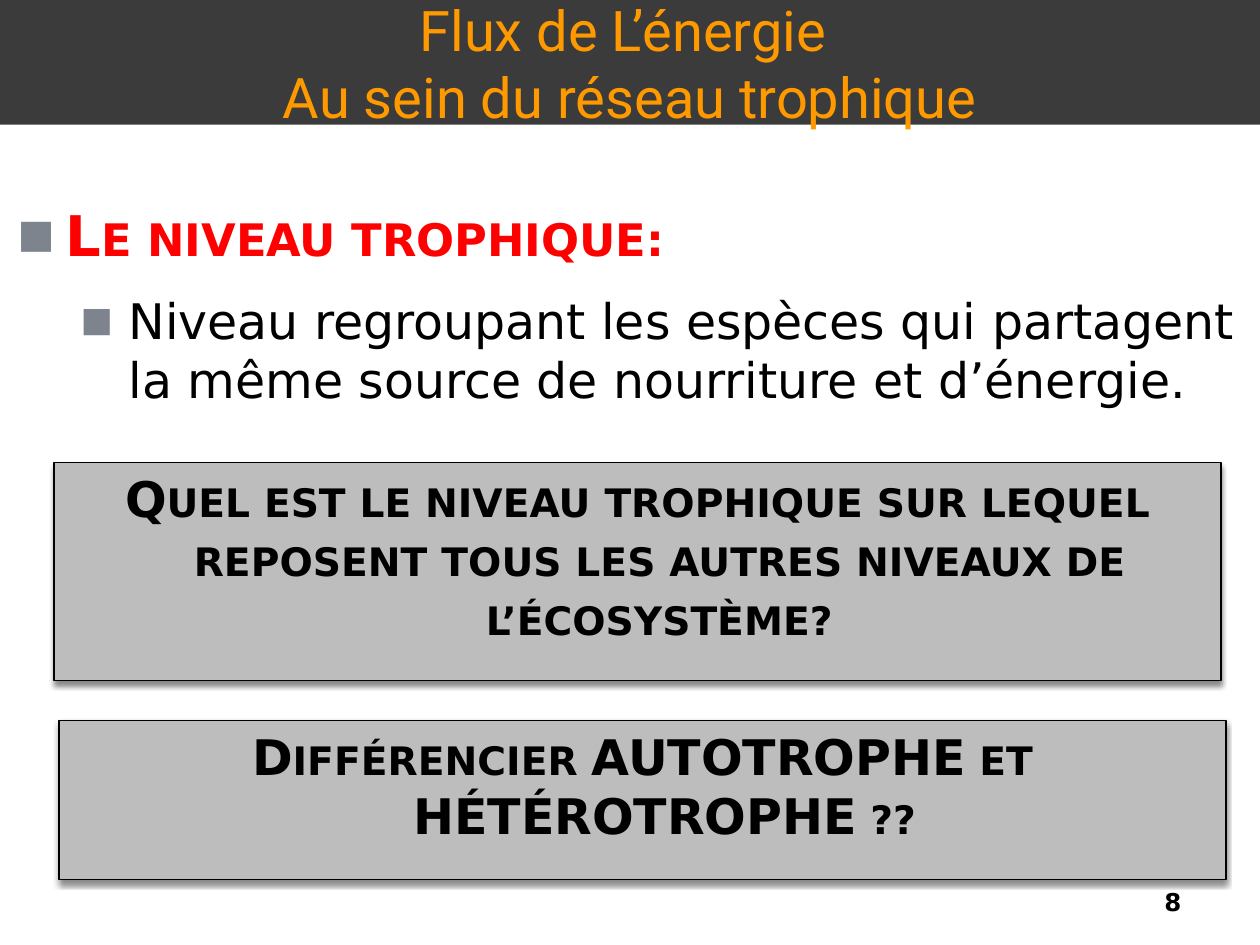
from lxml import etree
from pptx import Presentation
from pptx.dml.color import RGBColor as Rgb
from pptx.enum.shapes import MSO_SHAPE as Form
from pptx.enum.text import MSO_ANCHOR as Anchor, MSO_AUTO_SIZE as Auto, PP_ALIGN as Align
from pptx.oxml import parse_xml
from pptx.oxml.ns import nsdecls, qn
from pptx.util import Inches, Pt

HUES = {"bar": "3B3B3B", "title": "FF9900", "head": "FF0000",
        "text": "000000", "card": "BDBDBD", "bullet": "7E848D"}
SANS = "DejaVu Sans"


def style(para, size, hue, face=SANS, bold=False, small=False):
    font = para.font
    font.size, font.name, font.bold = Pt(size), face, bold
    font.color.rgb = Rgb.from_string(HUES[hue])
    if small:
        para._p.pPr.get_or_add_defRPr().set("cap", "small")


def place(shape, left, top, width, height):
    shape.left, shape.top = Inches(left), Inches(top)
    shape.width, shape.height = Inches(width), Inches(height)


deck = Presentation()
deck.slide_width, deck.slide_height = Inches(10), Inches(7.5)
slide = deck.slides.add_slide(deck.slide_layouts[1])
title, body = slide.placeholders[0], slide.placeholders[1]
for item in list(slide.placeholders)[2:]:
    item.element.getparent().remove(item.element)

# Title bar
place(title, 0, 0, 10, 0.99)
title.fill.solid()
title.fill.fore_color.rgb = Rgb.from_string(HUES["bar"])
frame = title.text_frame
frame.text = "Flux de L’énergie \nAu sein du réseau trophique"
frame.auto_size, frame.vertical_anchor = Auto.NONE, Anchor.MIDDLE
frame.margin_top = frame.margin_bottom = 0
for para in frame.paragraphs:
    para.alignment = Align.CENTER
    style(para, 32, "title", "Roboto")

# Definition list
place(body, 0.04, 1.54, 9.88, 1.97)
frame = body.text_frame
frame.text = ("Le niveau trophique:\nNiveau regroupant les espèces qui partagent "
              "la même source de nourriture et d’énergie.")
frame.auto_size = Auto.NONE
for level, para in enumerate(frame.paragraphs):
    para.level = level
    props = para._p.get_or_add_pPr()
    props.set("marL", str(Inches(0.38 + 0.5 * level)))
    props.set("indent", str(Inches(-0.38)))
    marks = (f'<a:buClr {nsdecls("a")}><a:srgbClr val="{HUES["bullet"]}"/></a:buClr>',
             f'<a:buSzPct {nsdecls("a")} val="70000"/>',
             f'<a:buFont {nsdecls("a")} typeface="{SANS}"/>',
             f'<a:buChar {nsdecls("a")} char="■"/>')
    for mark in marks:
        props.append(parse_xml(mark))
    para.space_before = Pt(13 * level)
    top = level == 0
    style(para, 32 if top else 28, "head" if top else "text", bold=top, small=top)

# Question cards
CARDS = [
    (0.43, 3.67, 1.73, "Quel est le niveau trophique sur lequel reposent "
                       "tous les autres niveaux de l’écosystème?"),
    (0.47, 5.72, 1.26, "Différencier AUTOTROPHE et HÉTÉROTROPHE ??"),
]
for left, top, height, words in CARDS:
    card = slide.shapes.add_shape(Form.RECTANGLE, Inches(left), Inches(top),
                                  Inches(9.26), Inches(height))
    card.fill.solid()
    card.fill.fore_color.rgb = Rgb.from_string(HUES["card"])
    card.line.color.rgb = Rgb.from_string(HUES["text"])
    card.line.width = Pt(0.79)
    card.shadow.inherit = False
    glow = etree.SubElement(card._element.spPr.find(qn("a:effectLst")), qn("a:outerShdw"),
                            blurRad=str(Pt(3)), dist=str(Pt(2.4)), dir="5400000",
                            algn="t", rotWithShape="0")
    tint = etree.SubElement(glow, qn("a:srgbClr"), val=HUES["text"])
    etree.SubElement(tint, qn("a:alpha"), val="45000")
    frame = card.text_frame
    frame.text, frame.vertical_anchor, frame.word_wrap = words, Anchor.TOP, True
    para = frame.paragraphs[0]
    para.alignment = Align.CENTER
    props = para._p.get_or_add_pPr()
    props.set("marL", str(Inches(0.35)))
    props.set("indent", str(Inches(-0.35)))
    style(para, 28, "text", bold=True, small=True)

# Page number
page = slide.shapes.add_textbox(Inches(8.86), Inches(7.06), Inches(0.9), Inches(0.19))
frame = page.text_frame
frame.text, frame.vertical_anchor, frame.word_wrap = "8", Anchor.MIDDLE, True
frame.margin_top = frame.margin_bottom = 0
frame.paragraphs[0].alignment = Align.CENTER
style(frame.paragraphs[0], 14, "text", bold=True)

deck.save("out.pptx")
